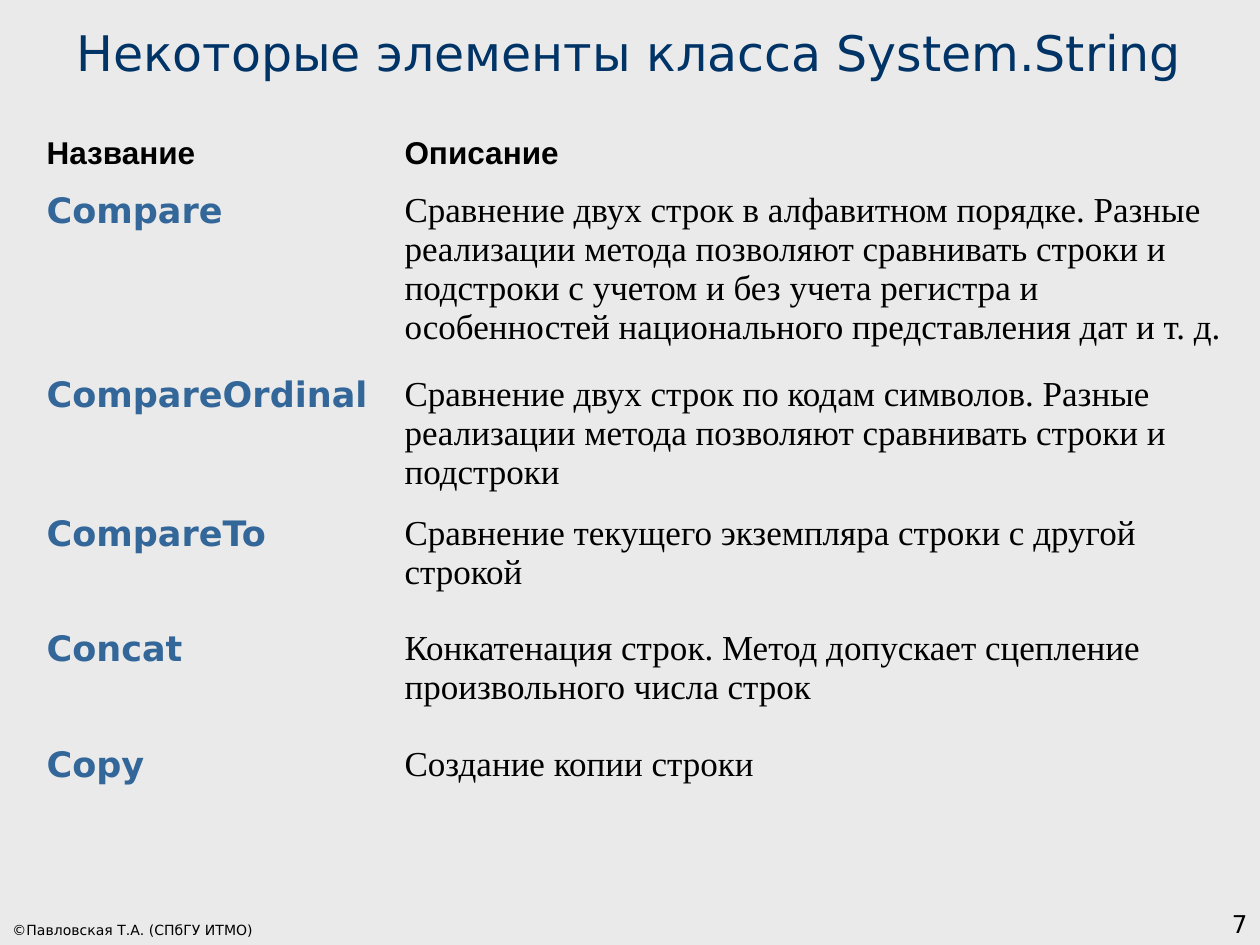
from dataclasses import dataclass

from pptx import Presentation
from pptx.dml.color import RGBColor
from pptx.enum.text import MSO_ANCHOR, PP_ALIGN
from pptx.util import Emu, Pt

BOTTOM = MSO_ANCHOR.BOTTOM
LEFT, RIGHT = PP_ALIGN.LEFT, PP_ALIGN.RIGHT
EMU_PER_PX = 914400 / 126
PLAIN_TABLE = "{2D5ABB26-0587-4C30-8999-92F81FD0307C}"


@dataclass(frozen=True)
class Style:
    """Font, size, colour and weight of a text."""
    font: str
    size: int
    color: str
    bold: bool = False


@dataclass(frozen=True)
class Theme:
    """Colours and type styles of the slide."""
    background: str = "EAEAEA"
    title: Style = Style("DejaVu Sans", 28, "003366")
    credit: Style = Style("DejaVu Sans", 8, "000000")
    number: Style = Style("DejaVu Sans", 14, "000000")
    heading: Style = Style("Arial", 18, "000000", True)
    method: Style = Style("DejaVu Sans", 20, "336699", True)
    description: Style = Style("Times New Roman", 20, "000000")


THEME = Theme()
HEADINGS = ("Название", "Описание")
METHODS = [
    ("Compare", "Сравнение двух строк в алфавитном порядке. Разные реализации метода "
     "позволяют сравнивать строки и подстроки с учетом и без учета регистра и "
     "особенностей национального представления дат и т. д."),
    ("CompareOrdinal", "Сравнение двух строк по кодам символов. Разные реализации "
     "метода позволяют сравнивать строки и подстроки"),
    ("CompareTo", "Сравнение текущего экземпляра строки с другой строкой"),
    ("Concat", "Конкатенация строк. Метод допускает сцепление произвольного числа строк"),
    ("Copy", "Создание копии строки"),
]
COLUMN_WIDTHS = (358, 843)
ROW_HEIGHTS = (55, 184, 116, 115, 116, 115)
HANGING_INDENT = 48


def px(length):
    """Turn px into EMU."""
    return Emu(round(length * EMU_PER_PX))


def write(frame, text, style, align=LEFT):
    """Put one styled paragraph into a text frame and return it."""
    frame.text = text
    para = frame.paragraphs[0]
    para.alignment = align
    for span in para.runs:
        span.font.name = style.font
        span.font.size = Pt(style.size)
        span.font.bold = style.bold
        span.font.color.rgb = RGBColor.from_string(style.color)
    return para


def add_label(page, box, text, style, align=LEFT):
    """Add a bottom-anchored text box."""
    frame = page.shapes.add_textbox(*map(px, box)).text_frame
    frame.word_wrap = True
    frame.vertical_anchor = BOTTOM
    write(frame, text, style, align)


def add_method_table(page, left, top):
    """Add the table of methods with its headings."""
    rows = [HEADINGS, *METHODS]
    table = page.shapes.add_table(
        len(rows), len(HEADINGS), px(left), px(top),
        px(sum(COLUMN_WIDTHS)), px(sum(ROW_HEIGHTS))).table
    table.first_row = table.horz_banding = False
    table._tbl.tblPr.find("{*}tableStyleId").text = PLAIN_TABLE
    for column, width in zip(table.columns, COLUMN_WIDTHS):
        column.width = px(width)
    for row, height in zip(table.rows, ROW_HEIGHTS):
        row.height = px(height)
    for row_index, texts in enumerate(rows):
        styles = (THEME.method, THEME.description) if row_index else (THEME.heading,) * 2
        for column_index, (text, style) in enumerate(zip(texts, styles)):
            cell = table.cell(row_index, column_index)
            cell.fill.background()
            para = write(cell.text_frame, text, style)
            if column_index == 0:
                properties = para._p.get_or_add_pPr()
                properties.set("marL", str(px(HANGING_INDENT)))
                properties.set("indent", str(px(-HANGING_INDENT)))


def add_footer(page, width, bottom):
    """Add the copyright line and the page number along the bottom edge."""
    add_label(page, (0, bottom - 35, 392, 35), "©Павловская Т.А. (СПбГУ ИТМО)", THEME.credit)
    add_label(page, (width - 262, bottom - 63, 262, 63), "7", THEME.number, RIGHT)


def main():
    """Build and save the deck."""
    deck = Presentation()
    deck.slide_width, deck.slide_height = px(1260), px(945)
    page = deck.slides.add_slide(deck.slide_layouts[6])
    page.background.fill.solid()
    page.background.fill.fore_color.rgb = RGBColor.from_string(THEME.background)
    add_footer(page, 1260, 945)
    add_label(page, (64, 16, 1181, 72), "Некоторые элементы класса System.String", THEME.title)
    add_method_table(page, 34, 130)
    deck.save("out.pptx")


if __name__ == "__main__":
    main()
